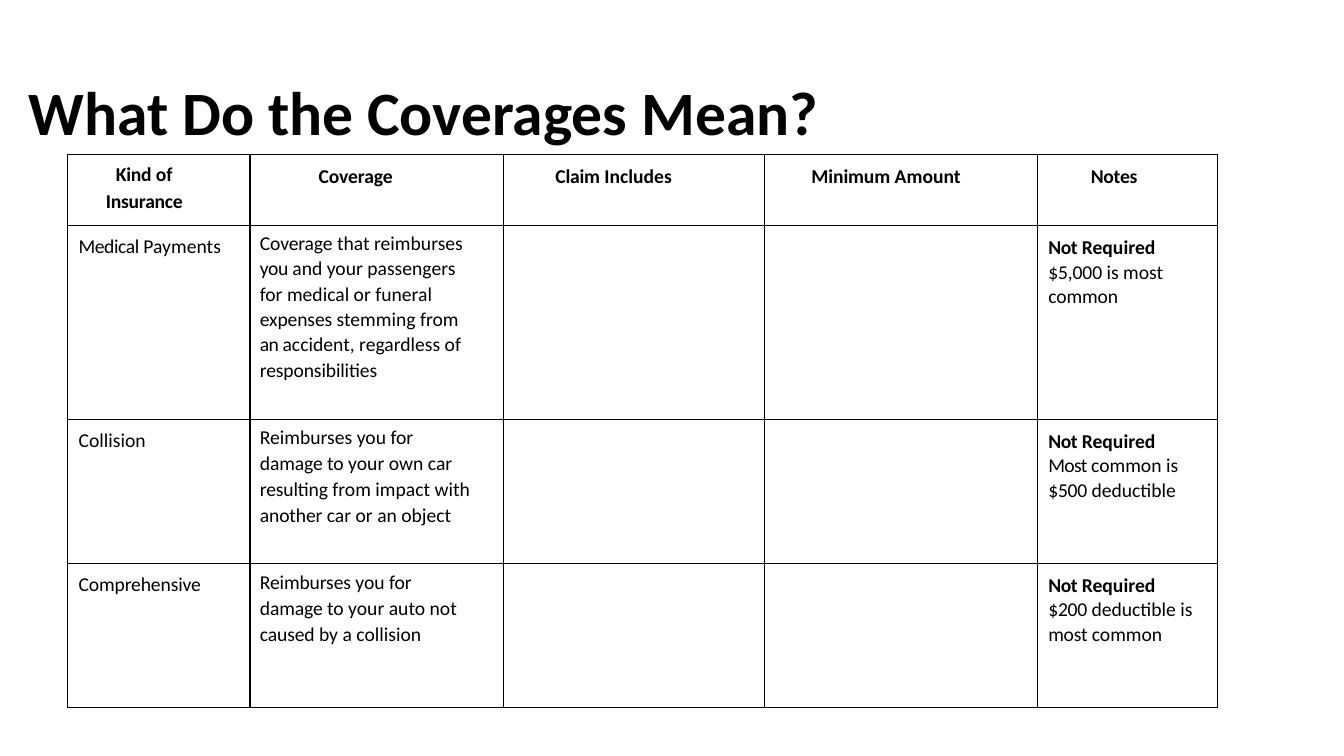
from dataclasses import dataclass

from lxml import etree
from pptx import Presentation
from pptx import util as u
from pptx.dml.color import RGBColor
from pptx.enum import text
from pptx.oxml.ns import qn


@dataclass(frozen=True)
class Theme:
    font: str = "Calibri"
    ink: RGBColor = RGBColor(0, 0, 0)
    paper: RGBColor = RGBColor(255, 255, 255)
    title_size: int = 44
    body_size: int = 14
    border: float = 1


@dataclass(frozen=True)
class Para:
    """Runs of (words, letter spacing in points); indents in cm."""
    runs: list
    line: float
    left: float
    right: float = 0
    first: float = 0
    bold: bool = False


class SlideBuilder:
    def __init__(self, prs, theme):
        self.theme = theme
        self.s = prs.slides.add_slide(prs.slide_layouts[5])

    def style(self, p, size, bold):
        p.font.name = self.theme.font
        p.font.size = u.Pt(size)
        p.font.bold = bold
        p.font.color.rgb = self.theme.ink

    def title(self, words, left, top, width, height):
        sp = self.s.shapes.title
        sp.left, sp.top, sp.width, sp.height = map(u.Cm, (left, top, width, height))
        tf = sp.text_frame
        tf.text = words
        tf.vertical_anchor = text.MSO_ANCHOR.MIDDLE
        p = tf.paragraphs[0]
        p.alignment = text.PP_ALIGN.LEFT
        p.line_spacing = 0.9
        self.style(p, self.theme.title_size, True)

    def table(self, rows, left, top, widths, heights):
        frame = self.s.shapes.add_table(
            len(heights), len(widths), u.Cm(left), u.Cm(top),
            u.Cm(sum(widths)), u.Cm(sum(heights)))
        table = frame.table
        table.first_row = table.horz_banding = False
        for column, width in zip(table.columns, widths):
            column.width = u.Cm(width)
        for row, height, contents in zip(table.rows, heights, rows):
            row.height = u.Cm(height)
            for cell, paras in zip(row.cells, contents):
                self.cell(cell, paras)

    def cell(self, cell, paras):
        self.borders(cell)
        cell.fill.solid()
        cell.fill.fore_color.rgb = self.theme.paper
        cell.margin_left = cell.margin_right = cell.margin_bottom = 0
        cell.margin_top = u.Cm(0.12)
        tf = cell.text_frame
        for i, para in enumerate(paras):
            p = tf.add_paragraph() if i else tf.paragraphs[0]
            self.paragraph(p, para)

    def paragraph(self, p, para):
        pPr = p._p.get_or_add_pPr()
        for name, length in (("marL", para.left), ("marR", para.right),
                             ("indent", para.first)):
            pPr.set(name, str(int(u.Cm(length))))
        p.line_spacing = para.line
        self.style(p, self.theme.body_size, para.bold)
        for words, spacing in para.runs:
            r = p.add_run()
            r.text = words
            if spacing:
                r.font._element.set("spc", str(round(spacing * 100)))

    def borders(self, cell):
        tcPr = cell._tc.get_or_add_tcPr()
        for side in ("lnL", "lnR", "lnT", "lnB"):
            ln = etree.SubElement(tcPr, qn(f"a:{side}"),
                                  w=str(int(u.Pt(self.theme.border))))
            fill = etree.SubElement(ln, qn("a:solidFill"))
            etree.SubElement(fill, qn("a:srgbClr"), val=str(self.theme.ink))


# Kinds of cell content
def heading(left, *runs, line=1.24, **indents):
    return [Para(runs, line, left, bold=True, **indents)]


def kind(*runs):
    return [Para(runs, 1.19, 0.28)]


def coverage(line, *runs):
    return [Para(runs, line, 0.25, right=0.69)]


def notes(*runs):
    return [Para([("Not ", -0.3), ("Required", 0)], 1.24, 0.28, bold=True),
            Para(runs, 1.02, 0.28, right=0.25)]


BLANK = []

ROWS = [
    # Header
    [heading(0.97, ("Kind ", -0.2), ("of ", 0), ("Insurance", -0.2),
             line=1.14, right=0.8, first=0.25),
     heading(1.73, ("Coverage", -0.1)),
     heading(1.32, ("Claim ", -0.2), ("Includes", 0)),
     heading(1.19, ("Minimum ", -0.1), ("Amount", 0)),
     heading(1.35, ("Notes", -0.2))],
    # Medical payments
    [kind(("Medical ", -0.3), ("Payments", 0)),
     coverage(1.06, ("Coverage ", -0.1), ("that reimburses ", 0), ("you ", -0.3),
              ("and your passengers for medical or funeral ", 0),
              ("expenses ", -0.1), ("stemming from ", 0), ("an ", -0.5),
              ("accident, regardless of ", 0), ("responsibilities", -0.1)),
     BLANK, BLANK,
     notes(("$5,000 ", -0.1), ("is most ", 0), ("common", -0.1))],
    # Collision
    [kind(("Collision", 0)),
     coverage(1.08, ("Reimburses you for ", 0), ("damage ", -0.1),
              ("to your own car ", 0), ("resulting ", -0.1),
              ("from impact with ", 0), ("another ", -0.1),
              ("car or an object", 0)),
     BLANK, BLANK,
     notes(("Most ", -0.5), ("common is ", 0), ("$500 ", -0.2), ("deductible", 0))],
    # Comprehensive
    [kind(("Comprehensive", -0.1)),
     coverage(1.09, ("Reimburses ", -0.1), ("you for ", 0), ("damage ", -0.1),
              ("to your auto not ", 0), ("caused ", -0.1), ("by a collision", 0)),
     BLANK, BLANK,
     notes(("$200 ", -0.2), ("deductible is ", 0), ("most ", -0.2), ("common", 0))],
]


def main():
    prs = Presentation()
    prs.slide_width, prs.slide_height = u.Cm(33.87), u.Cm(19.05)
    slide = SlideBuilder(prs, Theme())
    slide.title("What Do the Coverages Mean?", 0.46, 1.07, 29.21, 3.68)
    slide.table(ROWS, 1.7, 3.89, widths=[4.6, 6.38, 6.58, 6.88, 4.55],
                heights=[1.8, 4.88, 3.63, 3.63])
    prs.save("out.pptx")


if __name__ == "__main__":
    main()
